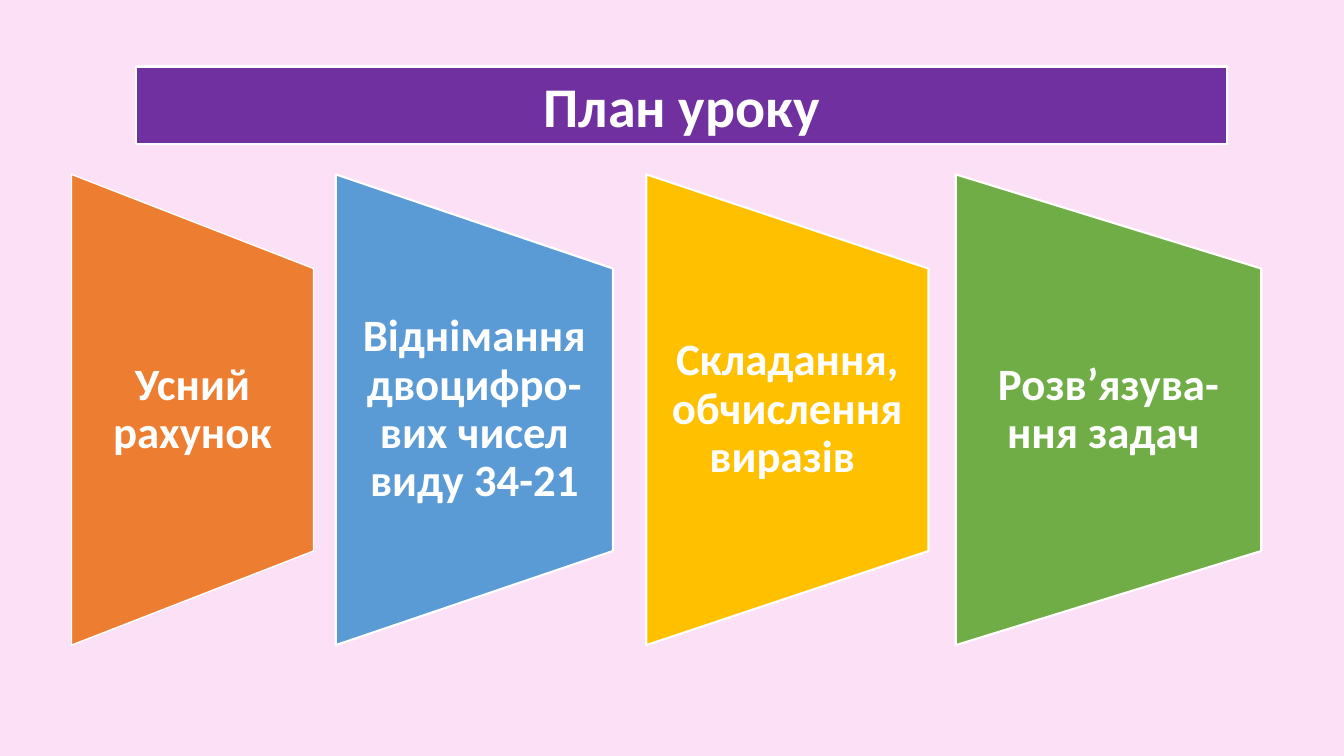
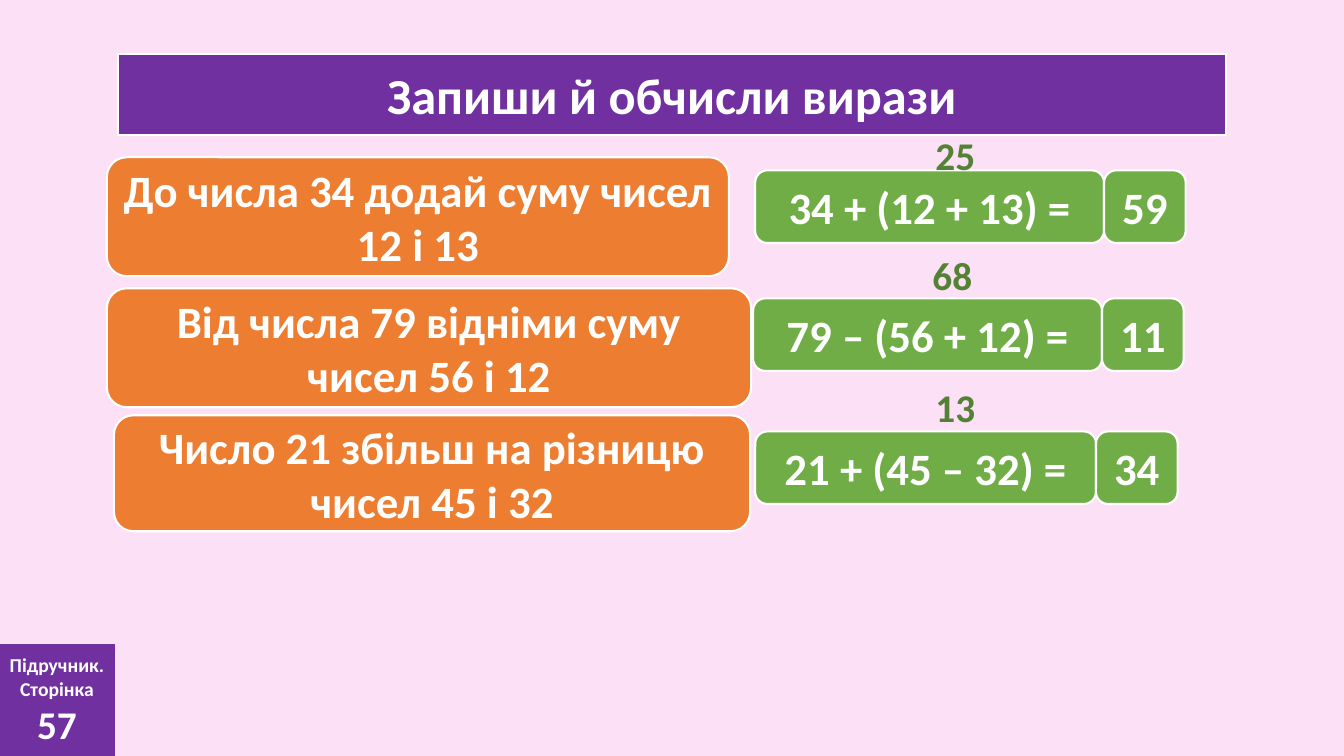
from pptx import Presentation
from pptx.dml.color import RGBColor
from pptx.enum.shapes import MSO_SHAPE as Shape
from pptx.enum.text import MSO_ANCHOR as Anchor, MSO_AUTO_SIZE as AutoSize, PP_ALIGN as Align
from pptx.util import Inches, Pt

COLORS = {
    "background": "FCE0F6", "purple": "7030A0", "orange": "ED7D31", "blue": "5B9BD5",
    "yellow": "FFC000", "green": "70AD47", "dark_green": "548235", "white": "FFFFFF",
}
FONT = {"name": "Calibri", "bold": True}
FRAME = {"word_wrap": True, "auto_size": AutoSize.NONE, "vertical_anchor": Anchor.MIDDLE}
TITLE_ONLY = 5

# Plan steps: text, colour, left, width, outline width
STEPS = [
    ("Усний рахунок", "orange", 0.71, 2.4, 1),
    ("Віднімання двоцифро-вих чисел виду 34-21", "blue", 3.33, 2.75, 1.5),
    ("Складання, обчислення виразів ", "yellow", 6.41, 2.8, 1.5),
    ("Розв’язува-ння задач ", "green", 9.48, 3.03, 1.5),
]
STEP_TOP, STEP_HEIGHT = 1.73, 4.67
STEP_INSET = 0.2  # share of the height lost at each end of the narrow side

# Exercises: task, its box, expression, its left, top and width, answer,
# partial result and its offset from the expression's left and top
EXERCISES = [
    ("До числа 34 додай суму чисел 12 і 13", (1.06, 1.56, 6.17, 1.18),
     "34 + (12 + 13) =", (7.49, 1.69, 3.46), "59", "25", (1.58, -0.51)),
    ("Від числа 79 відніми суму чисел 56 і 12", (1.06, 2.86, 6.39, 1.18),
     "79 – (56 + 12) =", (7.47, 2.96, 3.46), "11", "68", (1.57, -0.59)),
    ("Число 21 збільш на різницю чисел 45 і 32", (1.13, 4.12, 6.31, 1.15),
     "21 + (45 – 32) =", (7.49, 4.28, 3.38), "34", "13", (1.58, -0.6)),
]
ANSWER_WIDTH, ANSWER_HEIGHT = 0.81, 0.72


def color(name):
    return RGBColor.from_string(COLORS[name])


def set_all(target, values):
    for name, value in values.items():
        setattr(target, name, value)


def paint(shape, fill, outline=1.5):
    """Fill the shape and give it a white outline, or none when outline is 0."""
    shape.fill.solid()
    shape.fill.fore_color.rgb = color(fill)
    if outline:
        shape.line.color.rgb = color("white")
        shape.line.width = Pt(outline)
    else:
        shape.line.fill.background()


def write(shape, lines, font_color="white", **paragraph_format):
    """Write (text, size) lines, centred, into the shape."""
    frame = shape.text_frame
    set_all(frame, FRAME)
    for index, (text, size) in enumerate(lines):
        paragraph = frame.add_paragraph() if index else frame.paragraphs[0]
        set_all(paragraph, {"alignment": Align.CENTER, **paragraph_format})
        run = paragraph.add_run()
        run.text = text
        set_all(run.font, {**FONT, "size": Pt(size)})
        run.font.color.rgb = color(font_color)


def add_block(slide, preset, box, fill, lines=(), outline=1.5):
    block = slide.shapes.add_shape(preset, *map(Inches, box))
    block.shadow.inherit = False
    paint(block, fill, outline)
    if lines:
        write(block, lines)
    return block


def add_label(slide, box, text, size, font_color="white", inset=0.1, **paragraph_format):
    label = slide.shapes.add_textbox(*map(Inches, box))
    set_all(label.text_frame, {"margin_left": Inches(inset), "margin_right": Inches(inset)})
    write(label, [(text, size)], font_color, **paragraph_format)


def add_titled_slide(presentation, title, size, box):
    slide = presentation.slides.add_slide(presentation.slide_layouts[TITLE_ONLY])
    banner = slide.shapes.title
    set_all(banner, dict(zip(("left", "top", "width", "height"), map(Inches, box))))
    paint(banner, "purple")
    write(banner, [(title, size)])
    return slide


def add_step(slide, text, fill, left, width, outline):
    """A trapezoid turned to point right, with upright text over it."""
    turned_box = (left + (width - STEP_HEIGHT) / 2, STEP_TOP + (STEP_HEIGHT - width) / 2,
                  STEP_HEIGHT, width)
    trapezoid = add_block(slide, Shape.FLOWCHART_MANUAL_OPERATION, turned_box, fill,
                          outline=outline)
    trapezoid.rotation = 270
    text_box = (left, STEP_TOP + STEP_HEIGHT * STEP_INSET,
                width, STEP_HEIGHT * (1 - 2 * STEP_INSET))
    add_label(slide, text_box, text, 32, inset=0.22, line_spacing=0.9)


def add_exercise(slide, task, task_box, expression, place, answer, partial, offset):
    left, top, width = place
    add_block(slide, Shape.ROUNDED_RECTANGLE, task_box, "orange", [(task, 32)])
    for text, x, block_width in ((expression, left, width),
                                 (answer, left + width, ANSWER_WIDTH)):
        add_block(slide, Shape.ROUNDED_RECTANGLE, (x, top, block_width, ANSWER_HEIGHT),
                  "green", [(text, 32)])
    partial_box = (left + offset[0], top + offset[1], ANSWER_WIDTH, ANSWER_HEIGHT)
    add_label(slide, partial_box, partial, 28, "dark_green")


def add_page_tag(slide, page):
    add_block(slide, Shape.RECTANGLE, (-0.01, 6.39, 1.15, 1.11), "purple",
              [("Підручник.", 14), ("Сторінка", 14), (page, 28)], outline=0)


def build_plan(presentation):
    slide = add_titled_slide(presentation, "План уроку", 40, (1.35, 0.66, 10.82, 0.77))
    for step in STEPS:
        add_step(slide, *step)


def build_exercises(presentation):
    slide = add_titled_slide(presentation, "Запиши й обчисли вирази", 36,
                             (1.17, 0.54, 10.99, 0.8))
    for exercise in EXERCISES:
        add_exercise(slide, *exercise)
    add_page_tag(slide, "57")


def main():
    presentation = Presentation()
    set_all(presentation, {"slide_width": Inches(13.33), "slide_height": Inches(7.5)})
    background = presentation.slide_master.background.fill
    background.solid()
    background.fore_color.rgb = color("background")
    build_plan(presentation)
    build_exercises(presentation)
    presentation.save("out.pptx")


if __name__ == "__main__":
    main()
